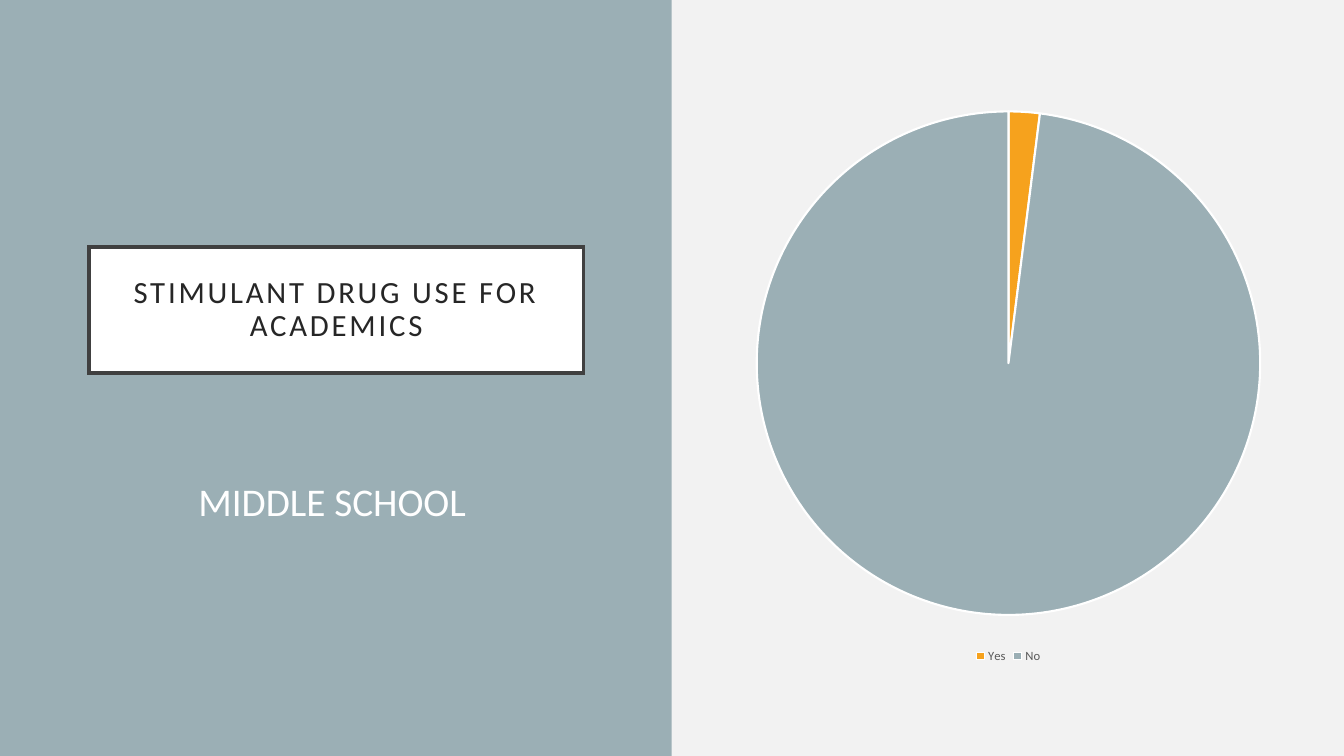
from dataclasses import dataclass

from lxml import etree
from pptx import Presentation
from pptx.chart import data as chart_data
from pptx.dml.color import RGBColor
from pptx.enum import chart as chart_enum
from pptx.enum import shapes, text
from pptx.oxml import ns
from pptx.util import Cm, Pt


@dataclass(frozen=True)
class Theme:
    font: str = "Calibri"
    background: str = "F2F2F2"
    panel: str = "9BAFB5"
    accent: str = "F6A21D"
    white: str = "FFFFFF"
    frame: str = "404040"
    title_text: str = "262626"
    legend_text: str = "595959"
    title_size: int = 22
    body_size: int = 28
    chart_size: int = 10
    legend_size: int = 9


@dataclass(frozen=True)
class Box:
    """Position and size in centimetres."""
    left: float
    top: float
    width: float
    height: float

    def lengths(self) -> tuple:
        return Cm(self.left), Cm(self.top), Cm(self.width), Cm(self.height)


@dataclass(frozen=True)
class Slice:
    label: str
    value: int
    color: str


THEME = Theme()
PANEL = Box(0, 0, 16.93, 19.05)
TITLE = Box(2.24, 6.22, 12.47, 3.18)
BODY = Box(3.1, 9.86, 10.54, 6.1)
CHART = Box(18.72, 2.24, 13.39, 14.58)
SLICES = (Slice("Yes", 2, THEME.accent), Slice("No", 98, THEME.panel))


def rgb(color: str) -> RGBColor:
    return RGBColor.from_string(color)


def paint(fill, color: str) -> None:
    fill.solid()
    fill.fore_color.rgb = rgb(color)


def set_font(font, size: int, color: str) -> None:
    font.name = THEME.font
    font.size = Pt(size)
    font.color.rgb = rgb(color)


def place(shape, box: Box) -> None:
    shape.left, shape.top, shape.width, shape.height = box.lengths()


def write(shape, words: str, size: int, color: str):
    """Put one centred paragraph in a placeholder and return it."""
    frame = shape.text_frame
    frame.text = words
    frame.word_wrap = True
    frame.auto_size = text.MSO_AUTO_SIZE.NONE
    paragraph = frame.paragraphs[0]
    paragraph.alignment = text.PP_ALIGN.CENTER
    paragraph.space_before = Pt(0)
    set_font(paragraph.font, size, color)
    return paragraph


def add_panel(slide) -> None:
    panel = slide.shapes.add_shape(shapes.MSO_SHAPE.RECTANGLE, *PANEL.lengths())
    panel.shadow.inherit = False
    paint(panel.fill, THEME.panel)
    panel.line.fill.background()
    slide.shapes._spTree.insert(2, panel._element)  # behind the placeholders


def fill_title(title) -> None:
    place(title, TITLE)
    paint(title.fill, THEME.white)
    paint(title.line.fill, THEME.frame)
    title.line.width = Pt(2.5)
    etree.SubElement(title.line._get_or_add_ln(), ns.qn("a:miter"), lim="800000")
    paragraph = write(title, "STIMULANT DRUG USE FOR ACADEMICS",
                      THEME.title_size, THEME.title_text)
    paragraph.line_spacing = 0.9
    paragraph.runs[0].font._element.set("spc", "200")
    frame = title.text_frame
    frame.vertical_anchor = text.MSO_ANCHOR.MIDDLE
    frame.margin_left = frame.margin_right = Cm(0.5)
    frame.margin_top = frame.margin_bottom = Cm(0.5)


def fill_body(body) -> None:
    place(body, BODY)
    paragraph = write(body, "MIDDLE SCHOOL", THEME.body_size, THEME.white)
    body.text_frame.vertical_anchor = text.MSO_ANCHOR.TOP
    body.text_frame.margin_top = Cm(2.16)
    properties = paragraph._p.get_or_add_pPr()
    properties.set("marL", "0")
    properties.set("indent", "0")
    no_bullet = etree.Element(ns.qn("a:buNone"))
    properties.find(ns.qn("a:defRPr")).addprevious(no_bullet)


def add_pie(slide) -> None:
    data = chart_data.CategoryChartData()
    data.categories = [part.label for part in SLICES]
    data.add_series("Series 1", [part.value for part in SLICES])
    chart = slide.shapes.add_chart(
        chart_enum.XL_CHART_TYPE.PIE, *CHART.lengths(), data).chart
    chart.has_title = False
    chart.font.name = THEME.font
    chart.font.size = Pt(THEME.chart_size)
    chart.has_legend = True
    chart.legend.position = chart_enum.XL_LEGEND_POSITION.BOTTOM
    chart.legend.include_in_layout = False
    set_font(chart.legend.font, THEME.legend_size, THEME.legend_text)
    plot = chart.plots[0]
    plot.vary_by_categories = True
    for index, part in enumerate(SLICES):
        point_format = plot.series[0].points[index].format
        paint(point_format.fill, part.color)
        paint(point_format.line.fill, THEME.white)
        point_format.line.width = Pt(1.5)


def main() -> None:
    presentation = Presentation()
    presentation.slide_width, presentation.slide_height = Cm(33.87), Cm(19.05)
    slide = presentation.slides.add_slide(presentation.slide_layouts[1])
    paint(slide.background.fill, THEME.background)
    add_panel(slide)
    fill_title(slide.shapes.title)
    add_pie(slide)
    fill_body(slide.placeholders[1])
    presentation.save("out.pptx")


if __name__ == "__main__":
    main()
